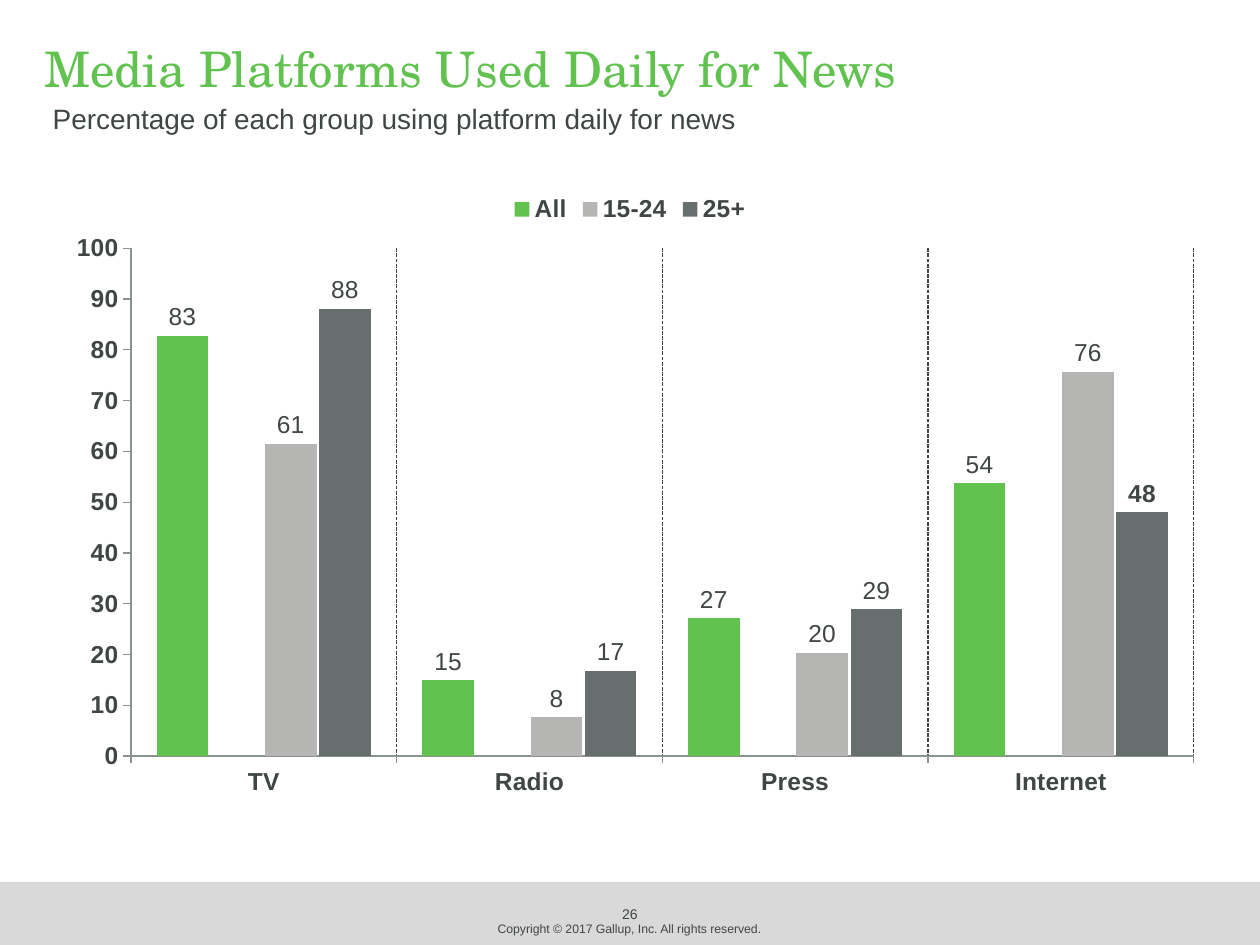
from dataclasses import dataclass

from lxml import etree
from pptx import Presentation
from pptx.chart.data import CategoryChartData
from pptx.dml.color import RGBColor
from pptx.enum.chart import XL_CHART_TYPE, XL_LABEL_POSITION, XL_LEGEND_POSITION, XL_TICK_MARK
from pptx.enum.dml import MSO_LINE
from pptx.enum.shapes import MSO_SHAPE
from pptx.enum.text import MSO_ANCHOR, PP_ALIGN
from pptx.oxml import parse_xml
from pptx.oxml.ns import nsdecls, qn
from pptx.util import Inches, Pt

COLUMNS = XL_CHART_TYPE.COLUMN_CLUSTERED
LABEL_ABOVE = XL_LABEL_POSITION.OUTSIDE_END
LEGEND_TOP = XL_LEGEND_POSITION.TOP
TICK_OUT = XL_TICK_MARK.OUTSIDE
DASHED = MSO_LINE.SQUARE_DOT
MIDDLE, TOP = MSO_ANCHOR.MIDDLE, MSO_ANCHOR.TOP
LEFT, CENTER = PP_ALIGN.LEFT, PP_ALIGN.CENTER


@dataclass(frozen=True)
class Theme:
    green: str = "61C250"
    light_gray: str = "B5B6B3"
    dark_gray: str = "676E6E"
    text: str = "404545"
    axis: str = "8A9292"
    band: str = "D9D9D9"
    heading_font: str = "TeX Gyre Schola"
    body_font: str = "Arial"
    title_size: float = 28
    subtitle_size: float = 16
    chart_size: float = 14
    page_size: float = 8
    copyright_size: float = 7
    line_width: float = 0.75


THEME = Theme()


@dataclass(frozen=True)
class AgeGroup:
    name: str
    values: tuple
    color: str
    labels: tuple = ()


@dataclass(frozen=True)
class Caption:
    text: str
    box: tuple
    size: float
    align: PP_ALIGN = CENTER
    anchor: MSO_ANCHOR = MIDDLE
    wrap: bool = False


PLATFORMS = ("TV", "Radio", "Press", "Internet")
# The empty second group leaves a gap between the total and the age groups
GROUPS = (
    AgeGroup("All", (82.7, 14.9, 27.1, 53.7), THEME.green, ("83", "15", "27", "54")),
    AgeGroup("Series 2", (None,) * len(PLATFORMS), THEME.green),
    AgeGroup("15-24", (61.5, 7.6, 20.3, 75.7), THEME.light_gray, ("61", "8", "20", "76")),
    AgeGroup("25+", (88.1, 16.8, 28.9, 48), THEME.dark_gray, ("88", "17", "29")),
)
SPACER_INDEX = 1
PLOT_AREA = {"x": 0.083, "y": 0.099, "w": 0.888, "h": 0.752}

CAPTIONS = (
    Caption("Percentage of each group using platform daily for news",
            (0.32, 0.76, 8.62, 0.37), THEME.subtitle_size, LEFT, TOP, True),
    Caption("26", (4.75, 7.13, 0.5, 0.24), THEME.page_size),
    Caption("Copyright © 2017 Gallup, Inc. All rights reserved.",
            (3.12, 7.26, 3.75, 0.22), THEME.copyright_size),
)


def inches(box: tuple) -> list:
    return [Inches(length) for length in box]


def rgb(color: str) -> RGBColor:
    return RGBColor.from_string(color)


def style_font(font, size: float, color: str = THEME.text,
               name: str = THEME.body_font, bold: bool = False) -> None:
    font.size, font.name, font.bold = Pt(size), name, bold
    font.color.rgb = rgb(color)


def style_line(line, color: str) -> None:
    line.color.rgb = rgb(color)
    line.width = Pt(THEME.line_width)


def add_footer_band(slide) -> None:
    band = slide.shapes.add_shape(MSO_SHAPE.RECTANGLE, *inches((0, 7, 10, 0.5)))
    band.shadow.inherit = False
    band.fill.solid()
    band.fill.fore_color.rgb = rgb(THEME.band)
    band.line.fill.background()


def set_title(slide, text: str) -> None:
    title = slide.shapes.title
    title.left, title.top, title.width, title.height = inches((0.25, 0.25, 9.5, 0.57))
    title.text_frame.text = text
    title.text_frame.vertical_anchor = MIDDLE
    heading = title.text_frame.paragraphs[0]
    heading.alignment = LEFT
    style_font(heading.font, THEME.title_size, THEME.green, THEME.heading_font)


def add_caption(slide, caption: Caption) -> None:
    frame = slide.shapes.add_textbox(*inches(caption.box)).text_frame
    frame.word_wrap = caption.wrap
    frame.vertical_anchor = caption.anchor
    frame.text = caption.text
    frame.paragraphs[0].alignment = caption.align
    style_font(frame.paragraphs[0].font, caption.size)


def style_axis(axis) -> None:
    axis.major_tick_mark = TICK_OUT
    style_font(axis.tick_labels.font, THEME.chart_size, bold=True)
    style_line(axis.format.line, THEME.axis)


def style_group(series, group: AgeGroup) -> None:
    series.invert_if_negative = False
    series.format.fill.solid()
    series.format.fill.fore_color.rgb = rgb(group.color)
    if not group.labels:
        return
    labels = series.data_labels
    labels.show_value = True
    labels.position = LABEL_ABOVE
    style_font(labels.font, THEME.chart_size, bold=True)
    # Rounded labels are plain; a point without one shows its bold value
    for index, text in enumerate(group.labels):
        label = series.points[index].data_label
        label.text_frame.text = text
        label.position = LABEL_ABOVE
        style_font(label.text_frame.paragraphs[0].font, THEME.chart_size)


def place_plot_area(chart) -> None:
    plot_area = chart.element.find(".//" + qn("c:plotArea"))
    for old_layout in plot_area.findall(qn("c:layout")):
        plot_area.remove(old_layout)
    layout = parse_xml(f"<c:layout {nsdecls('c')}><c:manualLayout/></c:layout>")
    settings = {"layoutTarget": "inner", "xMode": "edge", "yMode": "edge", **PLOT_AREA}
    for tag, value in settings.items():
        etree.SubElement(layout[0], qn(f"c:{tag}")).set("val", str(value))
    plot_area.insert(0, layout)


def add_legend(chart) -> None:
    chart.has_legend = True
    legend = chart.legend
    legend.position = LEGEND_TOP
    legend.include_in_layout = False
    style_font(legend.font, THEME.chart_size, bold=True)
    # Hide the spacer group
    hidden_entry = parse_xml(
        f'<c:legendEntry {nsdecls("c")}><c:idx val="{SPACER_INDEX}"/>'
        '<c:delete val="1"/></c:legendEntry>')
    chart.element.find(".//" + qn("c:legendPos")).addnext(hidden_entry)


def add_news_chart(slide) -> None:
    data = CategoryChartData()
    data.categories = PLATFORMS
    for group in GROUPS:
        data.add_series(group.name, group.values)
    chart = slide.shapes.add_chart(COLUMNS, *inches((0.25, 1.44, 9.5, 5.36)), data).chart
    chart.has_title = False
    style_font(chart.font, THEME.chart_size, bold=True)

    plot = chart.plots[0]
    plot.vary_by_categories = False
    plot.gap_width, plot.overlap = 100, -5
    for series, group in zip(plot.series, GROUPS):
        style_group(series, group)

    platforms, percent = chart.category_axis, chart.value_axis
    style_axis(platforms)
    style_axis(percent)
    platforms.has_major_gridlines = True
    dividers = platforms.major_gridlines.format.line
    style_line(dividers, THEME.text)
    dividers.dash_style = DASHED
    percent.has_major_gridlines = False
    percent.minimum_scale, percent.maximum_scale, percent.major_unit = 0, 100, 10

    add_legend(chart)
    place_plot_area(chart)


def main() -> None:
    deck = Presentation()
    deck.slide_width, deck.slide_height = Inches(10), Inches(7.5)
    slide = deck.slides.add_slide(deck.slide_layouts.get_by_name("Title Only"))
    add_footer_band(slide)
    set_title(slide, "Media Platforms Used Daily for News")
    add_news_chart(slide)
    for caption in CAPTIONS:
        add_caption(slide, caption)
    deck.save("out.pptx")


if __name__ == "__main__":
    main()
